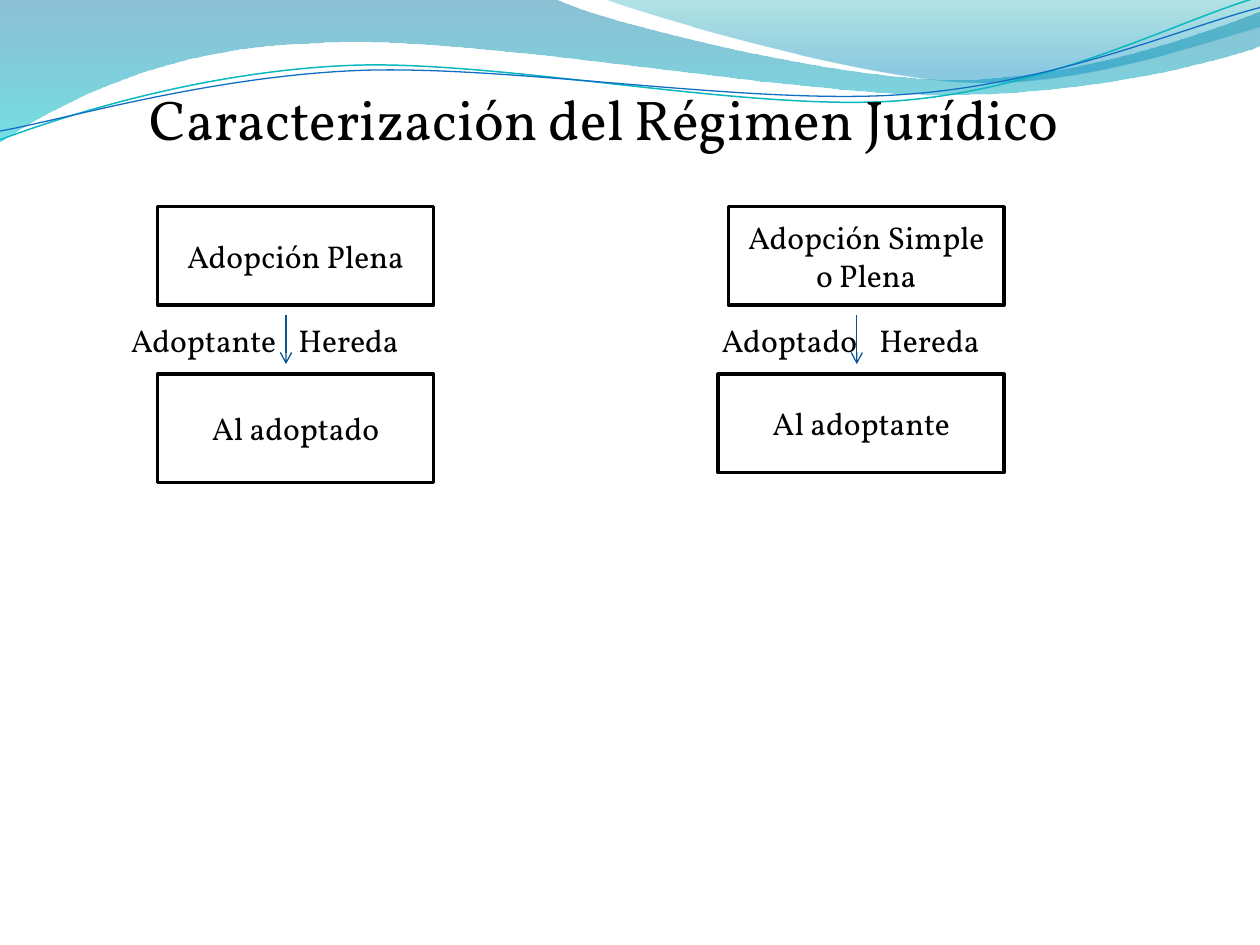
"""Build a slide on who inherits under full and simple adoption."""
import dataclasses
import math

import lxml.etree
import pptx
import pptx.dml.color
import pptx.enum.shapes
import pptx.enum.text
import pptx.oxml.ns
import pptx.util

Inches = pptx.util.Inches
Pt = pptx.util.Pt
Color = pptx.dml.color.RGBColor.from_string
qn = pptx.oxml.ns.qn


@dataclasses.dataclass(frozen=True)
class Theme:
    font: str = "Vollkorn"
    ink: str = "000000"
    paper: str = "FFFFFF"
    arrow: str = "095295"
    title_size: int = 32
    body_size: int = 18
    wave_top: str = "0074A1"
    wave_bottom: str = "00C6CF"
    crest_top: str = "00A1A9"
    crest_bottom: str = "008BBF"
    teal_line: str = "0AB8BF"
    blue_line: str = "0F6FC6"


def draw_curve(page, frame, segments, *, closed=False, tilt=0):
    """Draw a curve in a frame; its first segment is the starting point."""
    left, top, width, height = frame
    builder = page.shapes.build_freeform(Inches(left), Inches(top))
    builder.add_line_segments([(Inches(left + width), Inches(top + height))], close=False)
    shape = builder.convert_to_shape()
    shape.shadow.inherit = False
    shape.rotation = -tilt % 360
    cos, sin = math.cos(math.radians(tilt)), math.sin(math.radians(tilt))
    path = next(shape._element.iter(qn("a:path")))
    for node in list(path):
        path.remove(node)
    for index, segment in enumerate(segments):
        kind = "cubicBezTo" if len(segment) == 6 else "lnTo" if index else "moveTo"
        command = lxml.etree.SubElement(path, qn(f"a:{kind}"))
        for x, y in zip(segment[::2], segment[1::2]):
            dx, dy = x - left - width / 2, y - top - height / 2
            lxml.etree.SubElement(
                command, qn("a:pt"),
                x=str(Inches(width / 2 + dx * cos - dy * sin)),
                y=str(Inches(height / 2 + dx * sin + dy * cos)))
    if closed:
        lxml.etree.SubElement(path, qn("a:close"))
    return shape


def write_text(box, text, *, size, centered=False, grow=False):
    """Write one formatted paragraph into a box."""
    frame = box.text_frame
    frame.word_wrap = True
    if grow:
        frame.auto_size = pptx.enum.text.MSO_AUTO_SIZE.SHAPE_TO_FIT_TEXT
    if centered:
        frame.vertical_anchor = pptx.enum.text.MSO_ANCHOR.MIDDLE
    para = frame.paragraphs[0]
    para.alignment = pptx.enum.text.PP_ALIGN.CENTER if centered else pptx.enum.text.PP_ALIGN.LEFT
    span = para.add_run()
    span.text = text
    span.font.name = theme.font
    span.font.size = Pt(size)
    span.font.color.rgb = Color(theme.ink)


theme = Theme()
deck = pptx.Presentation()
deck.slide_width, deck.slide_height = Inches(10), Inches(7.5)
page = deck.slides.add_slide(deck.slide_layouts[6])
page.background.fill.solid()
page.background.fill.fore_color.rgb = Color(theme.paper)

waves = [
    ((-0.01, -0.01, 10.02, 1.14), [
        (0, 0), (4.4, -0.01), (4.76, 0.17, 6.64, 0.63, 7.58, 0.63),
        (8.53, 0.63, 9.58, 0.26, 10, 0.09), (10.01, 0.36),
        (9.83, 0.44, 8.7, 0.76, 7.46, 0.75), (6.22, 0.75, 3.82, 0.28, 2.57, 0.34),
        (1.29, 0.36, 0.46, 0.83, -0.01, 1.13), (0, 0),
    ], [(0, theme.wave_top, 45), (1, theme.wave_bottom, 55)]),
    ((4.79, -0.01, 5.21, 0.7), [
        (4.79, -0.01), (5.09, 0.11, 6.82, 0.62, 7.69, 0.65),
        (8.56, 0.69, 9.61, 0.32, 10, 0.21), (10, 0), (4.79, -0.01),
    ], [(0, theme.crest_top, 30), (0.8, theme.crest_bottom, 45)]),
]
for frame, segments, stops in waves:
    wave = draw_curve(page, frame, segments, closed=True)
    wave.line.fill.background()
    wave.fill.gradient()
    wave.fill.gradient_angle = 270
    for stop, (position, color, _) in zip(wave.fill.gradient_stops, stops):
        stop.position = position
        stop.color.rgb = Color(color)
    for node, (_, _, opacity) in zip(wave._element.spPr.iter(qn("a:srgbClr")), stops):
        lxml.etree.SubElement(node, qn("a:alpha"), val=str(opacity * 1000))

ripples = [
    ((-0.02, 0.22, 10.02, 0.71), [
        (0, 1.11), (0.48, 0.93, 1.58, 0.57, 2.77, 0.52),
        (3.95, 0.47, 5.93, 0.89, 7.13, 0.8), (8.33, 0.71, 9.38, 0.15, 9.98, -0.02),
    ], theme.teal_line, 0.85),
    ((-0.02, 0.3, 10.03, 0.58), [
        (0, 1.04), (0.47, 0.96, 1.64, 0.61, 2.83, 0.56),
        (4.03, 0.51, 5.97, 0.84, 7.17, 0.75), (8.36, 0.67, 9.41, 0.21, 10, 0.06),
    ], theme.blue_line, 0.75),
]
for frame, segments, color, width in ripples:
    ripple = draw_curve(page, frame, segments, tilt=2.7)
    ripple.fill.background()
    ripple.line.color.rgb = Color(color)
    ripple.line.width = Pt(width)

title = page.shapes.add_textbox(Inches(1.09), Inches(0.62), Inches(8.05), Inches(0.64))
write_text(title, "Caracterización del Régimen Jurídico", size=theme.title_size, grow=True)

boxes = [
    ("Adopción Plena", 1.25, 1.64, 2.19, 0.78),
    ("Al adoptado", 1.25, 2.97, 2.19, 0.86),
    ("Adopción Simple o Plena", 5.78, 1.64, 2.19, 0.78),
    ("Al adoptante", 5.7, 2.97, 2.27, 0.78),
]
for text, *place in boxes:
    box = page.shapes.add_shape(pptx.enum.shapes.MSO_SHAPE.RECTANGLE, *map(Inches, place))
    box.shadow.inherit = False
    box.fill.solid()
    box.fill.fore_color.rgb = Color(theme.paper)
    box.line.color.rgb = Color(theme.ink)
    box.line.width = Pt(2)
    write_text(box, text, size=theme.body_size, centered=True)

for x in (2.27, 6.8):
    arrow = page.shapes.add_connector(
        pptx.enum.shapes.MSO_CONNECTOR.STRAIGHT, Inches(x), Inches(2.5), Inches(x), Inches(2.89))
    arrow.line.color.rgb = Color(theme.arrow)
    arrow.line.width = Pt(0.75)
    line = arrow._element.spPr.find(qn("a:ln"))
    lxml.etree.SubElement(line, qn("a:tailEnd"), type="arrow")
    lxml.etree.SubElement(arrow._element.spPr, qn("a:effectLst"))

labels = [
    ("Adoptante", 0.94, 1.72), ("Hereda", 2.27, 1.72),
    ("Adoptado", 5.63, 1.33), ("Hereda", 6.88, 1.48),
]
for text, left, width in labels:
    label = page.shapes.add_textbox(Inches(left), Inches(2.5), Inches(width), Inches(0.4))
    write_text(label, text, size=theme.body_size, grow=True)

deck.save("out.pptx")
